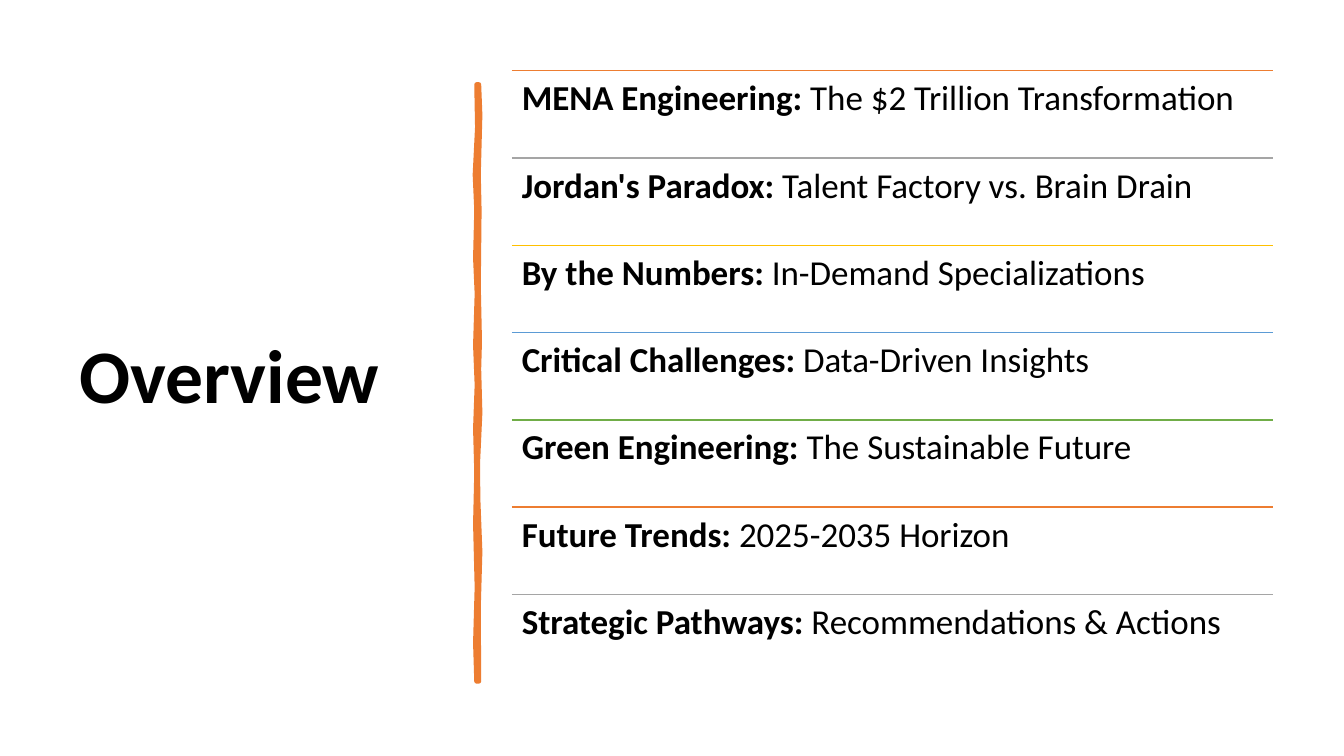
from lxml import etree
from pptx import Presentation
from pptx import util as u
from pptx.dml.color import RGBColor
from pptx.enum import shapes, text
from pptx.oxml import ns


def tint(code):
    return RGBColor.from_string(code)


class Deck:
    font = "Calibri"
    ink = "000000"
    inset = u.Cm(0.25)

    def __init__(self, width, height):
        self.show = Presentation()
        self.show.slide_width = u.Cm(width)
        self.show.slide_height = u.Cm(height)
        self.slide = self.show.slides.add_slide(self.show.slide_layouts[6])

    def label(self, left, top, width, height, size, parts, anchor):
        box = self.slide.shapes.add_textbox(
            u.Cm(left), u.Cm(top), u.Cm(width), u.Cm(height))
        frame = box.text_frame
        frame.word_wrap = True
        frame.vertical_anchor = anchor
        frame.margin_left = frame.margin_right = self.inset
        frame.margin_top = frame.margin_bottom = self.inset
        frame.text = parts[0]
        para = frame.paragraphs[0]
        para.line_spacing = 0.9
        for part in parts[1:]:
            para.add_run().text = part
        for place, run in enumerate(para.runs):
            run.font.name = self.font
            run.font.size = u.Pt(size)
            run.font.bold = place == 0
            run.font.color.rgb = tint(self.ink)

    def rule(self, left, top, width, color):
        line = self.slide.shapes.add_connector(
            shapes.MSO_CONNECTOR.STRAIGHT, u.Cm(left), u.Cm(top),
            u.Cm(left + width), u.Cm(top))
        line.line.color.rgb = tint(color)
        line.line.width = u.Pt(1)
        etree.SubElement(line._element.spPr, ns.qn("a:effectLst"))

    def stroke(self, points, color, weight):
        spots = [(u.Cm(x), u.Cm(y)) for x, y in points]
        pen = self.slide.shapes.build_freeform(*spots[0])
        pen.add_line_segments(spots[1:], close=True)
        shape = pen.convert_to_shape()
        shape.shadow.inherit = False
        shape.fill.solid()
        shape.fill.fore_color.rgb = tint(color)
        shape.line.color.rgb = tint(color)
        shape.line.width = u.Pt(weight)


ORANGE, GRAY, GOLD, BLUE, GREEN = "ED7D31", "A5A5A5", "FFC000", "5B9BD5", "70AD47"
COLORS = [ORANGE, GRAY, GOLD, BLUE, GREEN]
TOPICS = [
    ("MENA Engineering:", " The $2 Trillion Transformation"),
    ("Jordan's Paradox:", " Talent Factory vs. Brain Drain"),
    ("By the Numbers:", " In-Demand Specializations"),
    ("Critical Challenges:", " Data-Driven Insights"),
    ("Green Engineering:", " The Sustainable Future"),
    ("Future Trends:", " 2025-2035 Horizon"),
    ("Strategic Pathways:", " Recommendations & Actions"),
]
BAR = [
    (12.07, 2.13), (12.1, 2.9), (12.06, 4.4), (12.08, 5.3), (12.06, 7.2),
    (12.09, 8.6), (12.07, 9.3), (12.1, 10.4), (12.04, 11.7), (12.05, 12.6),
    (12.1, 13.9), (12.06, 15.3), (12.07, 17.17), (12.01, 17.17),
    (11.98, 16.2), (12.02, 14.8), (11.98, 13.2), (12.01, 11.9),
    (11.98, 10.8), (12.02, 9.7), (11.98, 8.7), (12.02, 7.4), (11.98, 6.5),
    (12.01, 5.3), (11.97, 4.4), (12.03, 3.2), (12.01, 2.13),
]
LEFT, TOP, WIDTH, STEP = 12.9, 1.78, 19.18, 2.2


def main():
    deck = Deck(33.87, 19.05)
    deck.label(1.75, TOP, 9.5, 15.52, 54, ["Overview"], text.MSO_ANCHOR.MIDDLE)
    deck.stroke(BAR, ORANGE, 3.25)
    for row, parts in enumerate(TOPICS):
        top = TOP + row * STEP
        deck.rule(LEFT, top, WIDTH, COLORS[row % len(COLORS)])
        deck.label(LEFT, top, WIDTH, STEP, 25, parts, text.MSO_ANCHOR.TOP)
    deck.show.save("out.pptx")


if __name__ == "__main__":
    main()
